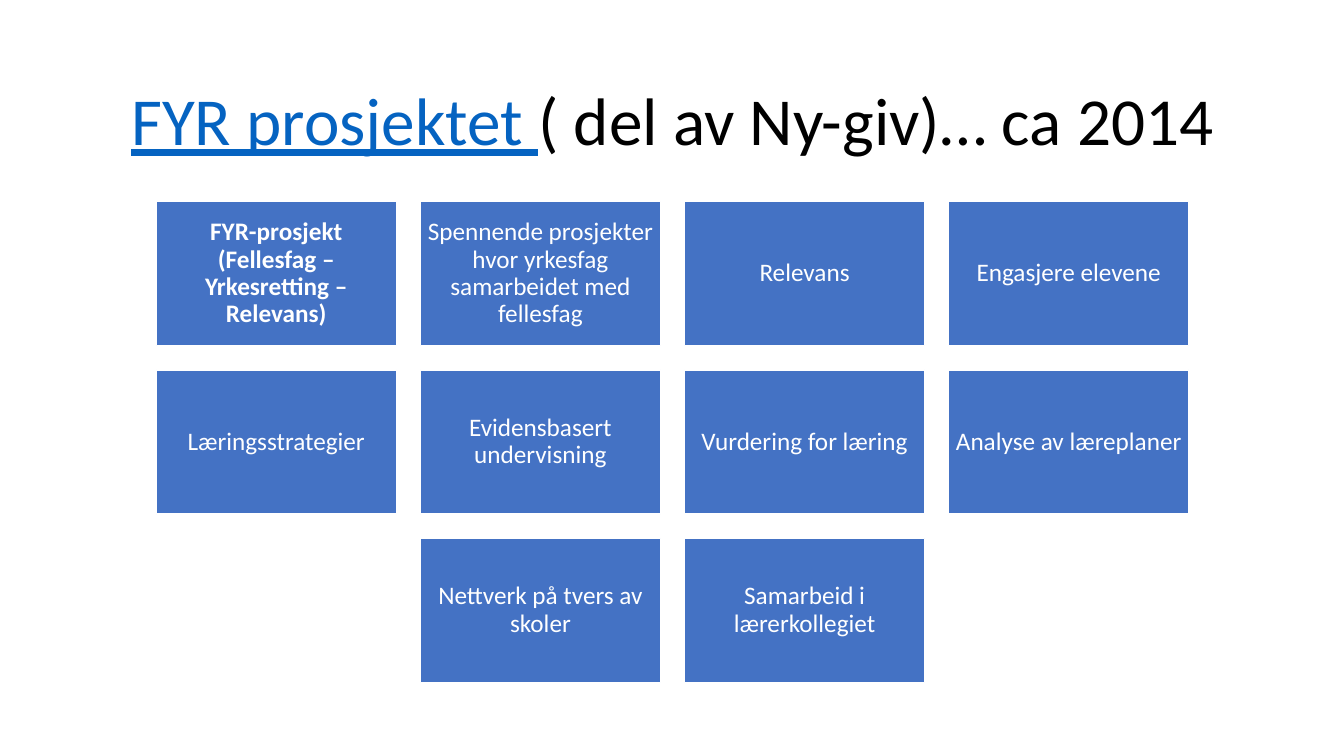
from pptx import Presentation
from pptx.dml.color import RGBColor
from pptx.enum.shapes import MSO_SHAPE
from pptx.enum.text import MSO_ANCHOR, MSO_AUTO_SIZE, PP_ALIGN
from pptx.util import Inches, Pt

RECTANGLE = MSO_SHAPE.RECTANGLE
MIDDLE = MSO_ANCHOR.MIDDLE
NO_AUTOFIT = MSO_AUTO_SIZE.NONE
CENTER = PP_ALIGN.CENTER

COLORS = {"link": "0563C1", "title": "000000", "box": "4472C4", "white": "FFFFFF"}
FONT = "Calibri"

LEFT, TOP = 1.55, 2.0
BOX_WIDTH, BOX_HEIGHT = 2.38, 1.43
COLUMN_STEP, ROW_STEP = 2.62, 1.67
COLUMNS = 4
INSET = Inches(0.07)

TOPIC_ROWS = [
    [
        "FYR-prosjekt (Fellesfag – Yrkesretting – Relevans)",
        "Spennende prosjekter hvor yrkesfag samarbeidet med fellesfag",
        "Relevans",
        "Engasjere elevene",
    ],
    [
        "Læringsstrategier",
        "Evidensbasert undervisning",
        "Vurdering for læring",
        "Analyse av læreplaner",
    ],
    ["Nettverk på tvers av skoler", "Samarbeid i lærerkollegiet"],
]


def color(name):
    return RGBColor.from_string(COLORS[name])


def add_run(paragraph, text, size, color_name, bold=False, underline=False):
    paragraph.alignment = CENTER
    paragraph.line_spacing = 0.9
    run = paragraph.add_run()
    run.text = text
    run.font.name = FONT
    run.font.size = Pt(size)
    run.font.bold = bold
    run.font.underline = underline
    run.font.color.rgb = color(color_name)


presentation = Presentation()
presentation.slide_width = Inches(13.33)
presentation.slide_height = Inches(7.5)
slide = presentation.slides.add_slide(presentation.slide_layouts.get_by_name("Title Only"))

title = slide.shapes.title
title.left, title.top = Inches(0.92), Inches(0.61)
title.width, title.height = Inches(11.5), Inches(1.24)
title.text_frame.auto_size = NO_AUTOFIT
title.text_frame.vertical_anchor = MIDDLE
heading = title.text_frame.paragraphs[0]
add_run(heading, "FYR prosjektet ", 48, "link", underline=True)
add_run(heading, "( del av Ny-giv)… ca 2014", 48, "title")

for row, topics in enumerate(TOPIC_ROWS):
    first_column = (COLUMNS - len(topics)) / 2
    for position, topic in enumerate(topics):
        box = slide.shapes.add_shape(
            RECTANGLE,
            Inches(LEFT + (first_column + position) * COLUMN_STEP),
            Inches(TOP + row * ROW_STEP),
            Inches(BOX_WIDTH),
            Inches(BOX_HEIGHT),
        )
        box.shadow.inherit = False
        box.fill.solid()
        box.fill.fore_color.rgb = color("box")
        box.line.color.rgb = color("white")
        box.line.width = Pt(1)
        frame = box.text_frame
        frame.word_wrap = True
        frame.vertical_anchor = MIDDLE
        frame.margin_left = frame.margin_right = INSET
        frame.margin_top = frame.margin_bottom = INSET
        add_run(frame.paragraphs[0], topic, 18, "white", bold=row == position == 0)

presentation.save("out.pptx")
